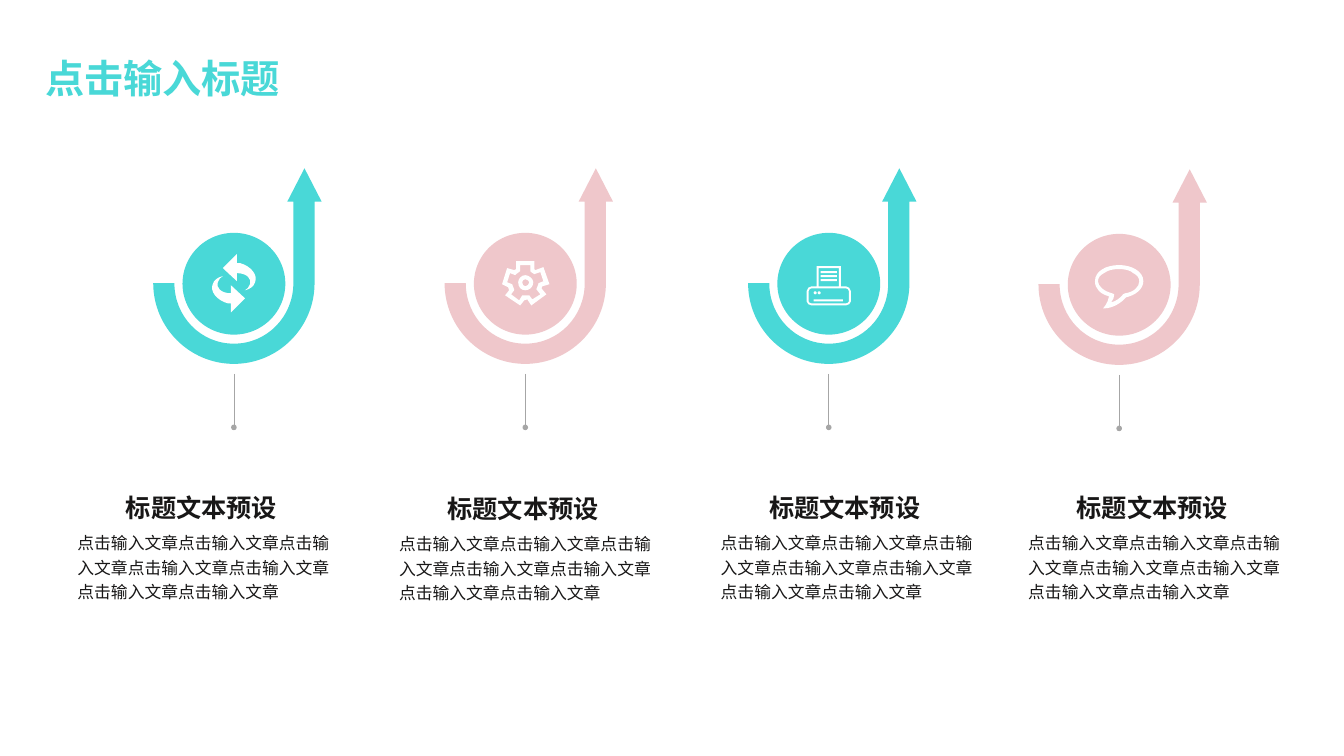
from lxml import etree
from pptx import Presentation
from pptx.dml.color import RGBColor
from pptx.enum.shapes import MSO_CONNECTOR, MSO_SHAPE
from pptx.enum.text import MSO_AUTO_SIZE
from pptx.oxml.ns import qn
from pptx.util import Inches, Pt

OVAL, RECT = MSO_SHAPE.OVAL, MSO_SHAPE.RECTANGLE
STRAIGHT = MSO_CONNECTOR.STRAIGHT
FIT_SHAPE = MSO_AUTO_SIZE.SHAPE_TO_FIT_TEXT

TEAL = RGBColor(0x49, 0xD8, 0xD7)
PINK = RGBColor(0xEF, 0xC7, 0xCB)
GREY = RGBColor(0xA6, 0xA6, 0xA6)
INK = RGBColor(0x18, 0x17, 0x17)
WHITE = RGBColor(0xFF, 0xFF, 0xFF)
FONT = "Lato"

TITLE = "点击输入标题"
HEADING = "标题文本预设"
BODY = "点击输入文章" * 7

# Outlines in hundredths of an inch from the disc centre.
# A pair is a corner; six numbers are a Bezier curve.
HOOK = [
    (70, -114), (53, -81), (59, -81), (59, 0), (59, 33, 33, 60, 0, 60),
    (-33, 60, -59, 33, -59, 0), (-80, 0), (-80, 44, -44, 80, 0, 80),
    (44, 80, 80, 44, 80, 0), (80, -81), (87, -81)]
REFRESH_ARROW = [
    (6, -20), (3, -20), (3, -29), (-11, -15), (3, -2), (3, -10),
    (13, -10, 18, -4, 16, 1), (15, 4, 13, 6, 11, 7),
    (16, 6, 20, 3, 21, -1), (24, -8, 17, -17, 6, -20)]
GEAR = [
    [(-20, 12), (-16, 7), (-17, 4), (-23, 1), (-18, -15), (-11, -13), (-9, -14),
     (-9, -22), (9, -22), (9, -14), (10, -13), (18, -16), (24, 1), (17, 3),
     (16, 5), (21, 11), (6, 22), (2, 16), (-1, 17), (-5, 22)],
    [(-18, -1), (-13, 1), (-11, 6), (-11, 7), (-14, 11), (-6, 17), (-3, 12),
     (4, 12), (7, 16), (15, 11), (11, 6), (13, 1), (13, 0), (18, -2), (15, -11),
     (9, -9), (6, -11), (5, -12), (5, -18), (-5, -18), (-5, -12), (-9, -9),
     (-10, -8), (-15, -10)],
    [(-7, -1), (-7, -4, -4, -8, 0, -8), (4, -8, 8, -4, 8, -1),
     (8, 4, 4, 7, 0, 7), (-4, 7, -7, 4, -7, -1)],
    [(-3, -1), (-3, -2, -2, -4, 0, -4), (2, -4, 4, -2, 4, -1),
     (4, 1, 2, 3, 0, 3), (-2, 3, -3, 1, -3, -1)]]
PRINTER = [
    [(17, 3), (12, 3), (12, -17), (-12, -17), (-12, 3), (-17, 3),
     (-19, 3, -22, 5, -22, 8), (-22, 18), (-22, 20, -19, 22, -17, 22),
     (17, 22), (19, 22, 22, 20, 22, 18), (22, 8), (22, 5, 19, 3, 17, 3)],
    [(-10, -15), (10, -15), (10, 3), (-10, 3)],
    [(20, 18), (20, 19, 18, 20, 17, 20), (-17, 20), (-18, 20, -20, 19, -20, 18),
     (-20, 8), (-20, 6, -18, 5, -17, 5), (17, 5), (18, 5, 20, 6, 20, 8)]]
BUBBLE = [
    [(-16, 24), (-16, 24, -11, 19, -10, 12), (-18, 10, -24, 5, -24, -3),
     (-24, -13, -13, -19, 0, -19), (12, -19, 24, -13, 24, -3),
     (24, 5, 16, 11, 7, 13), (-2, 23, -12, 24, -15, 24)],
    [(-15, -11), (-19, -9, -21, -6, -21, -3), (-21, 2, -15, 7, -7, 9),
     (-5, 10), (-5, 11), (-5, 13, -6, 16, -8, 18), (-4, 17, 0, 15, 4, 10),
     (6, 9), (14, 8, 20, 3, 20, -3), (20, -6, 18, -9, 14, -11),
     (11, -14, 5, -15, 0, -15), (-6, -15, -11, -14, -15, -11)]]


def paint(sp, color):
    sp.shadow.inherit = False
    sp.fill.solid()
    sp.fill.fore_color.rgb = color
    sp.line.fill.background()


def add_solid(shapes, kind, x, y, w, h, color):
    paint(shapes.add_shape(kind, Inches(x), Inches(y), Inches(w), Inches(h)), color)


def bend(sp, contours):
    """Join each curve's three line segments into one Bezier segment."""
    segments = iter(list(sp._element.iter(qn("a:lnTo"))))
    for contour in contours:
        for item in contour[1:]:
            first = next(segments)
            if len(item) == 2:
                continue
            curve = etree.Element(qn("a:cubicBezTo"))
            first.addprevious(curve)
            for segment in (first, next(segments), next(segments)):
                curve.append(segment[0])
                segment.getparent().remove(segment)


def add_outline(shapes, cx, cy, contours, color):
    builder = None
    for contour in contours:
        points = [(Inches(cx + item[i] / 100), Inches(cy + item[i + 1] / 100))
                  for item in contour for i in range(0, len(item), 2)]
        if builder is None:
            builder = shapes.build_freeform(*points[0])
        else:
            builder.move_to(*points[0])
        # A last point equal to the first still needs its own segment.
        builder.add_line_segments(points[1:], close=False)
    sp = builder.convert_to_shape()
    bend(sp, contours)
    for start in list(sp._element.iter(qn("a:moveTo")))[1:]:
        start.addprevious(etree.Element(qn("a:close")))
    outline = next(sp._element.iter(qn("a:moveTo"))).getparent()
    etree.SubElement(outline, qn("a:close"))
    paint(sp, color)


def add_text(slide, x, y, w, h, text, size, color, bold=False, wrap=False):
    tf = slide.shapes.add_textbox(Inches(x), Inches(y), Inches(w), Inches(h)).text_frame
    tf.word_wrap = wrap
    p = tf.paragraphs[0]
    p.text = text
    font = p.runs[0].font
    font.name, font.size, font.bold = FONT, Pt(size), bold
    font.color.rgb = color
    return tf


def draw_refresh(shapes, cx, cy):
    for turn in (1, -1):
        arrow = [tuple(turn * v for v in item) for item in REFRESH_ARROW]
        add_outline(shapes, cx, cy, [arrow], WHITE)


def draw_gear(shapes, cx, cy):
    add_outline(shapes, cx, cy, GEAR, WHITE)


def draw_printer(shapes, cx, cy):
    add_solid(shapes, RECT, cx - 0.15, cy + 0.16, 0.29, 0.02, WHITE)
    for row in range(3):
        add_solid(shapes, RECT, cx - 0.08, cy - 0.12 + 0.04 * row, 0.16, 0.02, WHITE)
    add_outline(shapes, cx, cy, PRINTER, WHITE)
    for dx in (-0.15, -0.11):
        add_solid(shapes, OVAL, cx + dx, cy + 0.08, 0.03, 0.03, WHITE)


def draw_bubble(shapes, cx, cy):
    add_outline(shapes, cx, cy, BUBBLE, WHITE)


def add_stem(shapes, cx, top, length):
    stem = shapes.add_connector(STRAIGHT, Inches(cx), Inches(top),
                                Inches(cx), Inches(top + length))
    stem.line.color.rgb = GREY
    stem.line.width = Pt(0.5)
    etree.SubElement(stem.line._get_or_add_ln(), qn("a:tailEnd"),
                     type="oval", w="sm", len="sm")
    etree.SubElement(stem._element.spPr, qn("a:effectLst"))


def draw_badge(slide, cx, cy, color, draw_icon):
    """Disc with its icon, the hooked arrow around it and the stem below."""
    shapes = slide.shapes.add_group_shape().shapes
    add_stem(shapes, cx, cy + 0.9, 0.53)
    add_outline(shapes, cx, cy, [HOOK], color)
    add_solid(shapes, OVAL, cx - 0.51, cy - 0.5, 1.02, 1.01, color)
    draw_icon(shapes, cx, cy)


def draw_caption(slide, x, y):
    body = add_text(slide, x, y + 0.37, 2.77, 0.61, BODY, 12, INK, wrap=True)
    body.paragraphs[0].line_spacing = 1.2
    add_text(slide, x + 0.48, y, 2.4, 0.38, HEADING, 18, INK, bold=True)


def draw_title(slide, x, y):
    tf = add_text(slide, x, y, 2.56, 0.57, TITLE, 28, TEAL, bold=True)
    tf.auto_size = FIT_SHAPE


def main():
    prs = Presentation()
    prs.slide_width, prs.slide_height = Inches(13.33), Inches(7.5)
    slide = prs.slides.add_slide(prs.slide_layouts[6])
    columns = [(2.32, 2.81, 0.67, 4.83, TEAL, draw_refresh),
               (5.21, 2.81, 3.86, 4.84, PINK, draw_gear),
               (8.22, 2.81, 7.05, 4.83, TEAL, draw_printer),
               (11.1, 2.82, 10.1, 4.83, PINK, draw_bubble)]
    for badge_x, badge_y, caption_x, caption_y, color, draw_icon in columns:
        draw_badge(slide, badge_x, badge_y, color, draw_icon)
        draw_caption(slide, caption_x, caption_y)
    draw_title(slide, 0.35, 0.49)
    prs.save("out.pptx")


if __name__ == "__main__":
    main()
